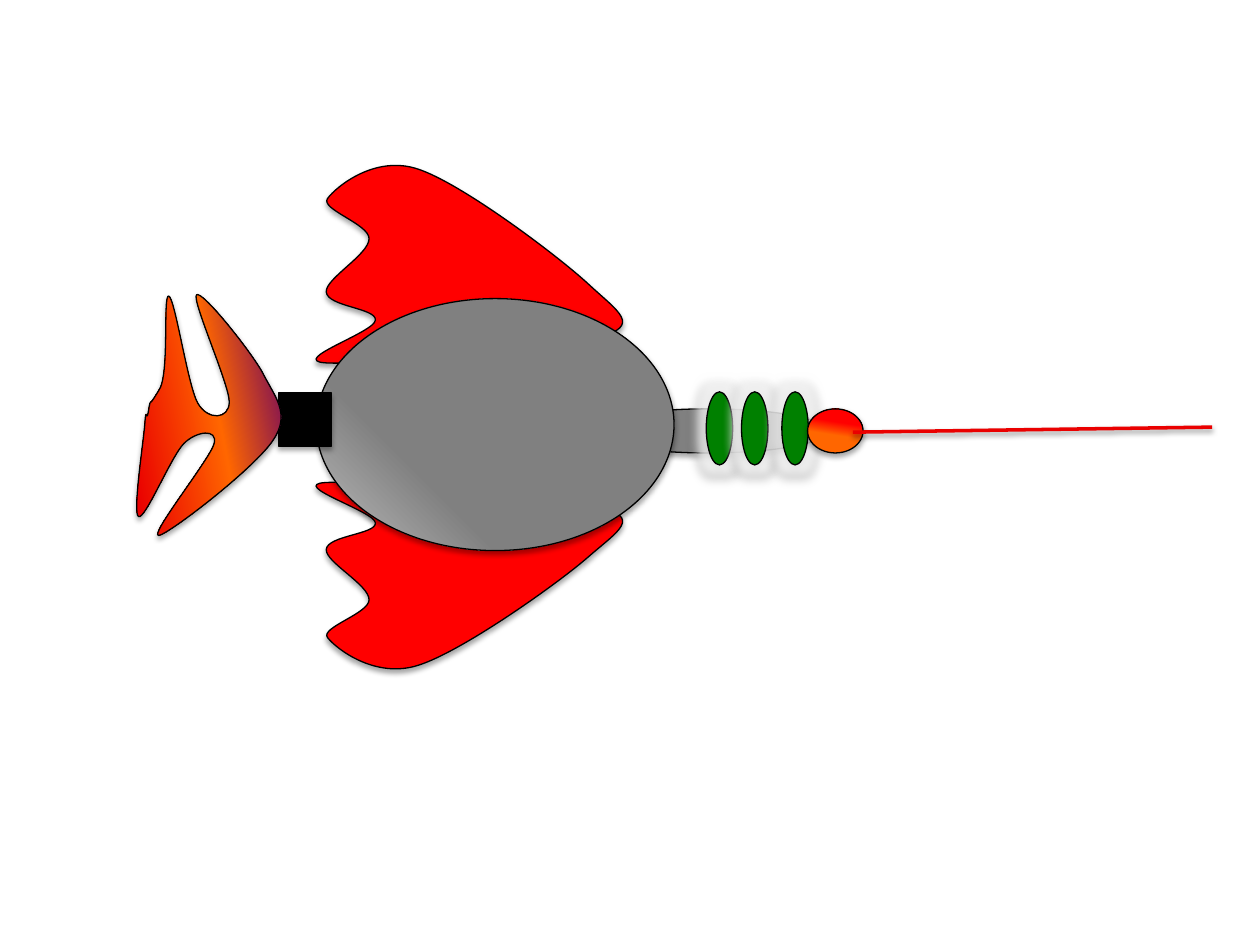
from lxml.etree import SubElement
from pptx import Presentation
from pptx.dml.color import RGBColor
from pptx.enum.shapes import MSO_CONNECTOR as Connector, MSO_SHAPE as Preset
from pptx.oxml.ns import qn
from pptx.util import Inches, Pt

BLACK, RED, GREY, GREEN, WHITE = "000000", "FF0000", "808080", "008000", "FFFFFF"
BODY_FADE = (315, [(0, "BFBFBF"), (30, GREY)])
HEAD_FADE = (279, [(42, "FF6600"), (68, RED)])
TAIL_FADE = (169, [(0, "660066"), (45, "FF6600"), (97, "EA0000")])

LOWER_WING = [
    (4.67, 4.42),
    (4.43, 4.63), (3.67, 5.17), (3.32, 5.28),
    (2.98, 5.39), (2.67, 5.15), (2.6, 5.06),
    (2.54, 4.98), (2.93, 4.87), (2.93, 4.76),
    (2.93, 4.64), (2.58, 4.46), (2.59, 4.36),
    (2.6, 4.25), (2.99, 4.24), (2.98, 4.15),
    (2.98, 4.06), (2.29, 3.85), (2.58, 3.83),
    (2.88, 3.81), (4.41, 3.92), (4.75, 4.02),
    (5.1, 4.11), (4.91, 4.21), (4.67, 4.42),
]
UPPER_WING = [(x, 6.94 - 1.06 * y) for x, y in LOWER_WING]
TAIL = [
    (1.17, 3.3),
    (1.16, 3.32), (1.16, 3.23), (1.15, 3.36),
    (1.14, 3.5), (1.05, 4.08), (1.1, 4.1),
    (1.15, 4.13), (1.36, 3.62), (1.46, 3.52),
    (1.56, 3.42), (1.73, 3.4), (1.7, 3.52),
    (1.67, 3.64), (1.18, 4.25), (1.26, 4.25),
    (1.34, 4.24), (2.03, 3.71), (2.17, 3.49),
    (2.31, 3.28), (2.18, 3.15), (2.08, 2.95),
    (1.97, 2.76), (1.6, 2.3), (1.56, 2.34),
    (1.52, 2.38), (1.82, 3.05), (1.82, 3.19),
    (1.82, 3.33), (1.65, 3.34), (1.57, 3.2),
    (1.49, 3.06), (1.39, 2.37), (1.34, 2.35),
    (1.29, 2.33), (1.35, 2.98), (1.26, 3.1),
    (1.18, 3.23), (1.21, 3.17), (1.19, 3.2),
    (1.18, 3.24), (1.18, 3.27), (1.17, 3.3),
]
WINGS = [
    (LOWER_WING, (2.51, 3.82, 2.43, 1.48), RED),
    (UPPER_WING, (2.51, 1.31, 2.43, 1.57), RED),
]
TAIL_FIN = (TAIL, (1.09, 2.33, 1.14, 1.92), TAIL_FADE)

RING_CENTRES = [5.71, 5.99, 6.31]
NECK_AND_BODY = [
    (Preset.OVAL, (5.62, 3.42), (1.9, 0.35), GREY),
    (Preset.OVAL, (3.93, 3.37), (2.84, 2), BODY_FADE),
]
RINGS = [(Preset.OVAL, (x, 3.4), (0.21, 0.58), GREEN) for x in RING_CENTRES]
HEAD_AND_JOINT = [
    (Preset.OVAL, (6.63, 3.42), (0.44, 0.35), HEAD_FADE),
    (Preset.RECTANGLE, (2.42, 3.33), (0.42, 0.42), BLACK),
]
TONGUE = (6.77, 3.43, 9.62, 3.39)


def colour(value):
    return RGBColor.from_string(value)


def add_element(parent, tag, **values):
    return SubElement(parent, qn(tag), {key: str(value) for key, value in values.items()})


def add_colour(parent, value, alpha=100):
    node = add_element(parent, "a:srgbClr", val=value)
    if alpha < 100:
        add_element(node, "a:alpha", val=alpha * 1000)


def add_effects(shape, alpha=35, distance=1.8, glow=False):
    effects = add_element(shape._element.spPr, "a:effectLst")
    if glow:
        add_colour(add_element(effects, "a:glow", rad=Pt(11)), WHITE, 75)
    shadow = add_element(effects, "a:outerShdw", blurRad=Pt(3.1), dist=Pt(distance),
                         dir=90 * 60000, rotWithShape=0)
    add_colour(shadow, BLACK, alpha)


def set_fill(shape, fill):
    if isinstance(fill, str):
        shape.fill.solid()
        shape.fill.fore_color.rgb = colour(fill)
        return
    angle, stops = fill
    shape.fill.gradient()
    shape.fill.gradient_angle = 360 - angle
    stop_list = shape._element.spPr.find(".//" + qn("a:gsLst"))
    for stop in list(stop_list):
        stop_list.remove(stop)
    for position, value in stops:
        add_colour(add_element(stop_list, "a:gs", pos=position * 1000), value)


def set_line(shape, value, width):
    shape.line.color.rgb = colour(value)
    shape.line.width = Pt(width)


def finish(shape, fill, glow=False):
    set_fill(shape, fill)
    set_line(shape, BLACK, 0.75)
    add_effects(shape, glow=glow)


def add_outline(shapes, outline, frame, fill):
    left, top, width, height = map(Inches, frame)
    knots = [(Inches(x), Inches(y)) for x, y in outline]
    builder = shapes.build_freeform(*knots[0])
    builder.add_line_segments(knots[3::3], close=True)
    shape = builder.convert_to_shape()
    shape.left, shape.top, shape.width, shape.height = left, top, width, height
    route = shape._element.spPr.find(".//" + qn("a:path"))
    route.set("w", str(width))
    route.set("h", str(height))
    for step in list(route):
        route.remove(step)
    local = [(x - left, y - top) for x, y in knots]
    steps = [("a:moveTo", local[:1])]
    steps += [("a:cubicBezTo", local[i:i + 3]) for i in range(1, len(local), 3)]
    for tag, points in steps:
        step = add_element(route, tag)
        for x, y in points:
            add_element(step, "a:pt", x=x, y=y)
    add_element(route, "a:close")
    finish(shape, fill)


def add_solid(shapes, preset, centre, size, fill, glow=False):
    corner = [middle - length / 2 for middle, length in zip(centre, size)]
    finish(shapes.add_shape(preset, *map(Inches, (*corner, *size))), fill, glow)


def main():
    """Build the slide with the winged creature."""
    deck = Presentation()
    deck.slide_width, deck.slide_height = Inches(10), Inches(7.5)
    page = deck.slides.add_slide(deck.slide_layouts[6])
    shapes = page.shapes.add_group_shape().shapes
    for wing in WINGS:
        add_outline(shapes, *wing)
    for solid in NECK_AND_BODY:
        add_solid(shapes, *solid)
    for ring in RINGS:
        add_solid(shapes, *ring, glow=True)
    for solid in HEAD_AND_JOINT:
        add_solid(shapes, *solid)
    tongue = shapes.add_connector(Connector.STRAIGHT, *map(Inches, TONGUE))
    set_line(tongue, "EA0000", 2)
    add_effects(tongue, alpha=38, distance=1.6)
    add_outline(shapes, *TAIL_FIN)
    deck.save("out.pptx")


if __name__ == "__main__":
    main()
